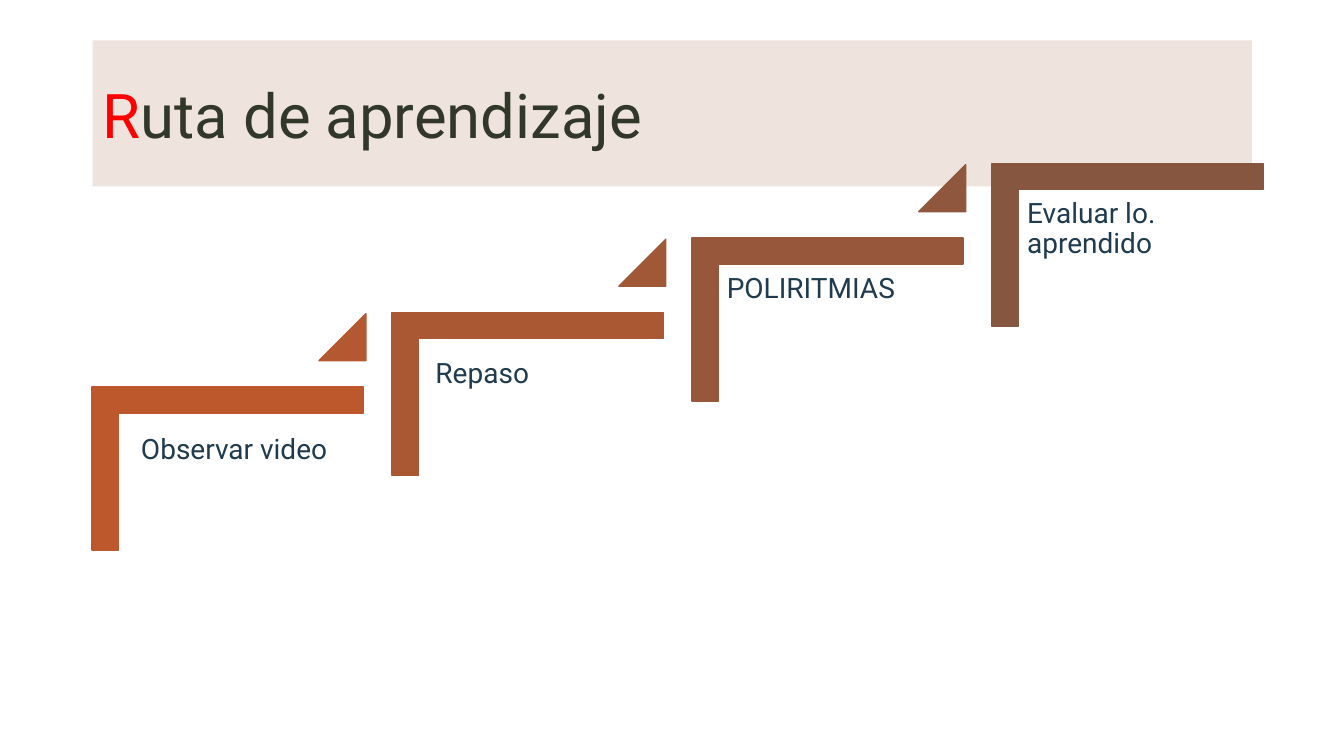
from pptx import Presentation
from pptx.dml.color import RGBColor
from pptx.enum import shapes, text
from pptx.oxml import xmlchemy
from pptx.util import Pt
from lxml import etree


def color(hex_string):
    return RGBColor.from_string(hex_string)


class RouteSlide:
    font = "Roboto"
    label_color = "203A4E"
    label_size = 20
    title_size = 44
    inset = 5.76

    def __init__(self, presentation):
        self.slide = presentation.slides.add_slide(presentation.slide_layouts[6])

    def shape(self, kind, box, fill, adjustments=(), rotation=0, outlined=True):
        shape = self.slide.shapes.add_shape(kind, *map(Pt, box))
        shape.shadow.inherit = False
        shape.rotation = rotation
        shape.fill.solid()
        shape.fill.fore_color.rgb = color(fill)
        if outlined:
            shape.line.color.rgb = color(fill)
            shape.line.width = Pt(1)
        else:
            shape.line.fill.background()
        for index, value in enumerate(adjustments):
            shape.adjustments[index] = value
        return shape

    def run(self, paragraph, words, size, hex_string):
        run = paragraph.add_run()
        run.text = words
        run.font.name = self.font
        run.font.size = Pt(size)
        run.font.color.rgb = color(hex_string)

    def title(self, box, fill, opacity, runs):
        banner = self.shape(shapes.MSO_SHAPE.RECTANGLE, box, fill, outlined=False)
        fill_color = banner.fill._xPr.find(".//" + xmlchemy.qn("a:srgbClr"))
        alpha = etree.SubElement(fill_color, xmlchemy.qn("a:alpha"))
        alpha.set("val", str(opacity * 1000))
        frame = banner.text_frame
        frame.word_wrap = True
        frame.vertical_anchor = text.MSO_ANCHOR.MIDDLE
        paragraph = frame.paragraphs[0]
        paragraph.alignment = text.PP_ALIGN.LEFT
        for words, hex_string in runs:
            self.run(paragraph, words, self.title_size, hex_string)

    def step(self, box, fill):
        self.shape(shapes.MSO_SHAPE.CORNER, box, fill, (0.161, 0.161), 90)

    def rise(self, box, fill):
        self.shape(shapes.MSO_SHAPE.ISOSCELES_TRIANGLE, box, fill, (1,))

    def label(self, box, words):
        frame = self.slide.shapes.add_textbox(*map(Pt, box)).text_frame
        frame.word_wrap = True
        frame.margin_left = frame.margin_right = Pt(self.inset)
        frame.margin_top = frame.margin_bottom = Pt(self.inset)
        paragraph = frame.paragraphs[0]
        paragraph.line_spacing = 0.9
        self.run(paragraph, words, self.label_size, self.label_color)


def main():
    presentation = Presentation()
    presentation.slide_width = Pt(960)
    presentation.slide_height = Pt(540)
    route = RouteSlide(presentation)
    route.title((66.24, 28.8, 828, 104.4), "EBDCD5", 80,
                [("R", "FF0000"), ("uta de aprendizaje", "313829")])

    steps = [
        ("Observar video", 95, 305.3, "BD582C", "B35830"),
        ("Repaso", 305.3, 250.6, "AA5834", "A05837"),
        ("POLIRITMIAS", 513.4, 190.1, "97573A", "8F573D"),
        ("Evaluar lo. aprendido", 727.9, 136.8, "865640", None),
    ]
    step_across, step_up = 214.2, 53.2
    for index, (words, left, top, step_fill, rise_fill) in enumerate(steps):
        across, up = index * step_across, index * step_up
        route.step((104.4 + across, 237.8 - up, 116.6, 193.7), step_fill)
        route.label((left, top, 175, 153.4), words)
        if rise_fill:
            route.rise((227.9 + across, 224.1 - up, 33.5, 33.5), rise_fill)

    presentation.save("out.pptx")


if __name__ == "__main__":
    main()
